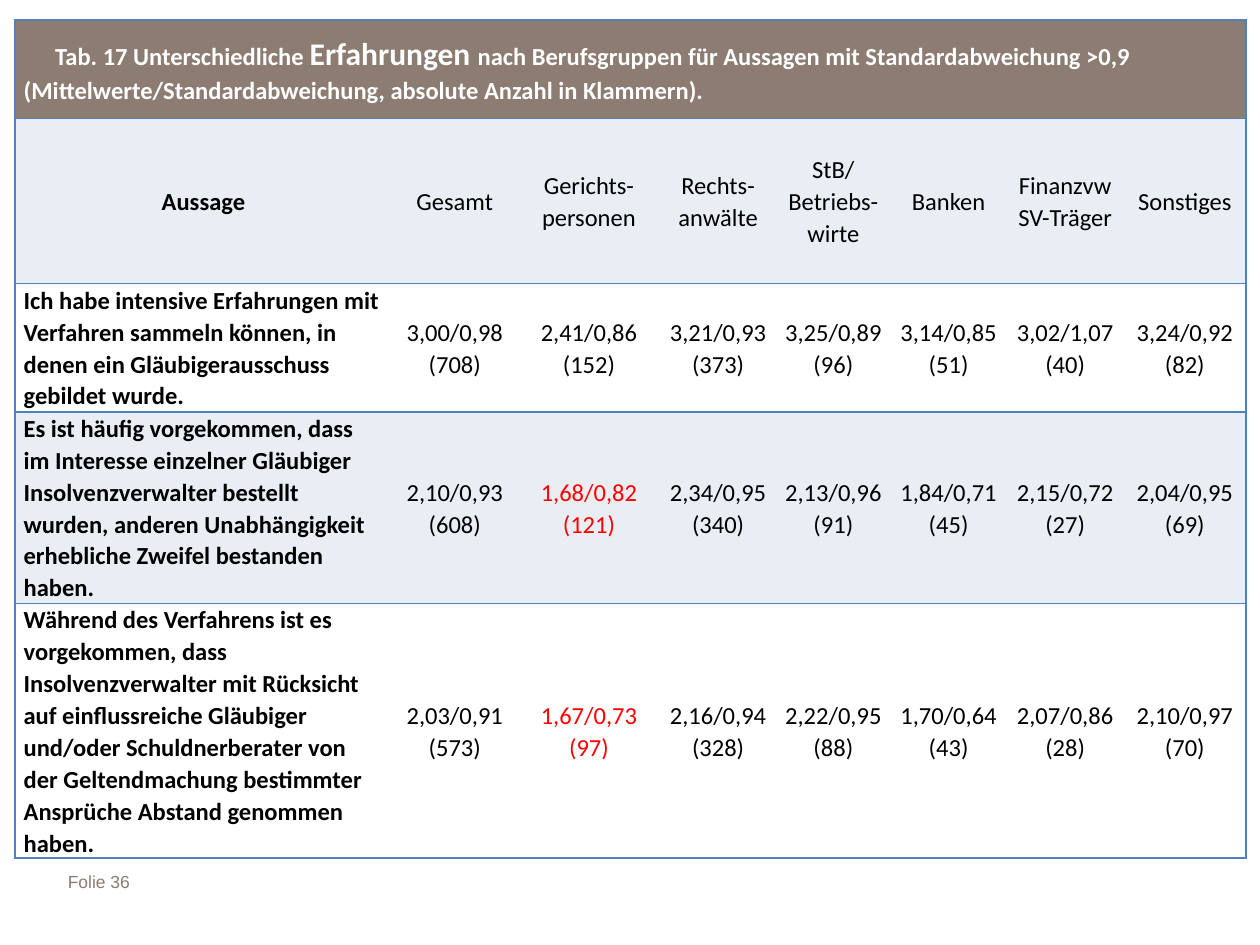
from dataclasses import dataclass

from lxml import etree
from pptx import Presentation
from pptx.dml.color import RGBColor
from pptx.enum.text import MSO_ANCHOR, PP_ALIGN
from pptx.oxml.ns import qn
from pptx.util import Inches, Pt

LEFT, CENTER = PP_ALIGN.LEFT, PP_ALIGN.CENTER
MIDDLE = MSO_ANCHOR.MIDDLE
PLAIN_STYLE = "{2D5ABB26-0587-4C30-8999-92F81FD0307C}"


@dataclass(frozen=True)
class Theme:
    taupe: str = "8C7C72"
    band: str = "E9EDF4"
    white: str = "FFFFFF"
    black: str = "000000"
    red: str = "FF0000"
    border: str = "4F81BD"
    table_font: str = "Calibri"
    footer_font: str = "Arial"
    body: int = 14
    emphasis: int = 18
    footer: int = 10


THEME = Theme()
COLUMNS = [2.99, 1, 1.13, 0.92, 0.91, 0.92, 0.93, 0.97]
ROWS = [0.78, 1.31, 1.02, 1.52, 2.02]
CAPTION = [
    ("Tab. 17 Unterschiedliche ", THEME.body),
    ("Erfahrungen ", THEME.emphasis),
    ("nach Berufsgruppen für Aussagen mit Standardabweichung >0,9 "
     "(Mittelwerte/Standardabweichung, absolute Anzahl in Klammern).", THEME.body),
]
STATEMENTS = [
    ["Aussage", "Gesamt", "Gerichts-personen", "Rechts-anwälte",
     "StB/\vBetriebs-wirte", "Banken", "Finanzvw\vSV-Träger", "Sonstiges"],
    ["Ich habe intensive Erfahrungen mit Verfahren sammeln können, in denen ein "
     "Gläubigerausschuss gebildet wurde.",
     "3,00/0,98 (708)", "2,41/0,86 (152)", "3,21/0,93 (373)", "3,25/0,89 (96)",
     "3,14/0,85 (51)", "3,02/1,07 (40)", "3,24/0,92 (82)"],
    ["Es ist häufig vorgekommen, dass im Interesse einzelner Gläubiger "
     "Insolvenzverwalter bestellt wurden, anderen Unabhängigkeit erhebliche "
     "Zweifel bestanden haben.",
     "2,10/0,93 (608)", "1,68/0,82 (121)", "2,34/0,95 (340)", "2,13/0,96 (91)",
     "1,84/0,71 (45)", "2,15/0,72 (27)", "2,04/0,95 (69)"],
    ["Während des Verfahrens ist es vorgekommen, dass Insolvenzverwalter mit "
     "Rücksicht auf einflussreiche Gläubiger und/oder Schuldnerberater von der "
     "Geltendmachung bestimmter Ansprüche Abstand genommen haben.",
     "2,03/0,91 (573)", "1,67/0,73 (97)", "2,16/0,94 (328)", "2,22/0,95 (88)",
     "1,70/0,64 (43)", "2,07/0,86 (28)", "2,10/0,97 (70)"],
]
HIGHLIGHTS = {(3, 2), (4, 2)}


def apply(target, formats):
    for name, value in formats.items():
        setattr(target, name, value)


def style_font(font, color, **formats):
    apply(font, formats)
    font.color.rgb = RGBColor.from_string(color)


def add_borders(cell, sides):
    properties = cell._tc.get_or_add_tcPr()
    for side in sides:
        line = etree.SubElement(properties, qn(f"a:ln{side}"), w=str(Pt(1)))
        fill = etree.SubElement(line, qn("a:solidFill"))
        etree.SubElement(fill, qn("a:srgbClr"), val=THEME.border)


def format_cell(cell, sides, fill):
    apply(cell, {"margin_left": Pt(4.9), "margin_right": Pt(4.9),
                 "margin_top": 0, "margin_bottom": 0, "vertical_anchor": MIDDLE})
    add_borders(cell, sides)
    cell.fill.solid()
    cell.fill.fore_color.rgb = RGBColor.from_string(fill)


def fill_caption(table):
    caption = table.cell(0, 0)
    caption.merge(table.cell(0, len(COLUMNS) - 1))
    paragraph = caption.text_frame.paragraphs[0]
    paragraph._p.get_or_add_pPr().set("indent", str(Inches(0.25)))
    apply(paragraph, {"line_spacing": 1.07, "space_after": Pt(8)})
    for wording, size in CAPTION:
        run = paragraph.add_run()
        run.text = wording
        style_font(run.font, THEME.white, name=THEME.table_font, size=Pt(size), bold=True)


def fill_statements(table):
    for row, statement in enumerate(STATEMENTS, start=1):
        for column, wording in enumerate(statement):
            cell = table.cell(row, column)
            cell.text = wording
            paragraph = cell.text_frame.paragraphs[0]
            is_statement = column == 0 and row > 1
            apply(paragraph, {"alignment": LEFT if is_statement else CENTER,
                              "line_spacing": 1.07, "space_after": Pt(8)})
            color = THEME.red if (row, column) in HIGHLIGHTS else THEME.black
            for run in paragraph.runs:
                style_font(run.font, color, name=THEME.table_font,
                           size=Pt(THEME.body), bold=column == 0)


def add_experience_table(slide, left, top, width, height):
    frame = slide.shapes.add_table(len(ROWS), len(COLUMNS), left, top, width, height)
    table = frame.table
    apply(table, {"first_row": False, "horz_banding": False})
    table._tbl.tblPr.find(qn("a:tableStyleId")).text = PLAIN_STYLE
    for column, share in zip(table.columns, COLUMNS):
        column.width = int(width * share / sum(COLUMNS))
    for row, share in zip(table.rows, ROWS):
        row.height = int(height * share / sum(ROWS))
    last = len(COLUMNS) - 1
    for row in range(len(ROWS)):
        fill = THEME.taupe if row == 0 else THEME.band if row % 2 else THEME.white
        for column in range(len(COLUMNS)):
            sides = ["L"] * (column == 0) + ["R"] * (column == last or row == 0) + ["T", "B"]
            format_cell(table.cell(row, column), sides, fill)
    fill_caption(table)
    fill_statements(table)


def add_footer(slide, left, top, width, height):
    footer = slide.shapes.add_textbox(left, top, width, height).text_frame
    footer.word_wrap = True
    footer.text = "Folie 36"
    style_font(footer.paragraphs[0].runs[0].font, THEME.taupe,
               name=THEME.footer_font, size=Pt(THEME.footer))


def main():
    presentation = Presentation()
    apply(presentation, {"slide_width": Inches(10), "slide_height": Inches(7.5)})
    slide = presentation.slides.add_slide(presentation.slide_layouts[6])
    add_footer(slide, Inches(0.44), Inches(6.86), Inches(2.49), Inches(0.36))
    add_experience_table(slide, Inches(0.12), Inches(0.16),
                         Inches(sum(COLUMNS)), Inches(sum(ROWS)))
    presentation.save("out.pptx")


if __name__ == "__main__":
    main()
